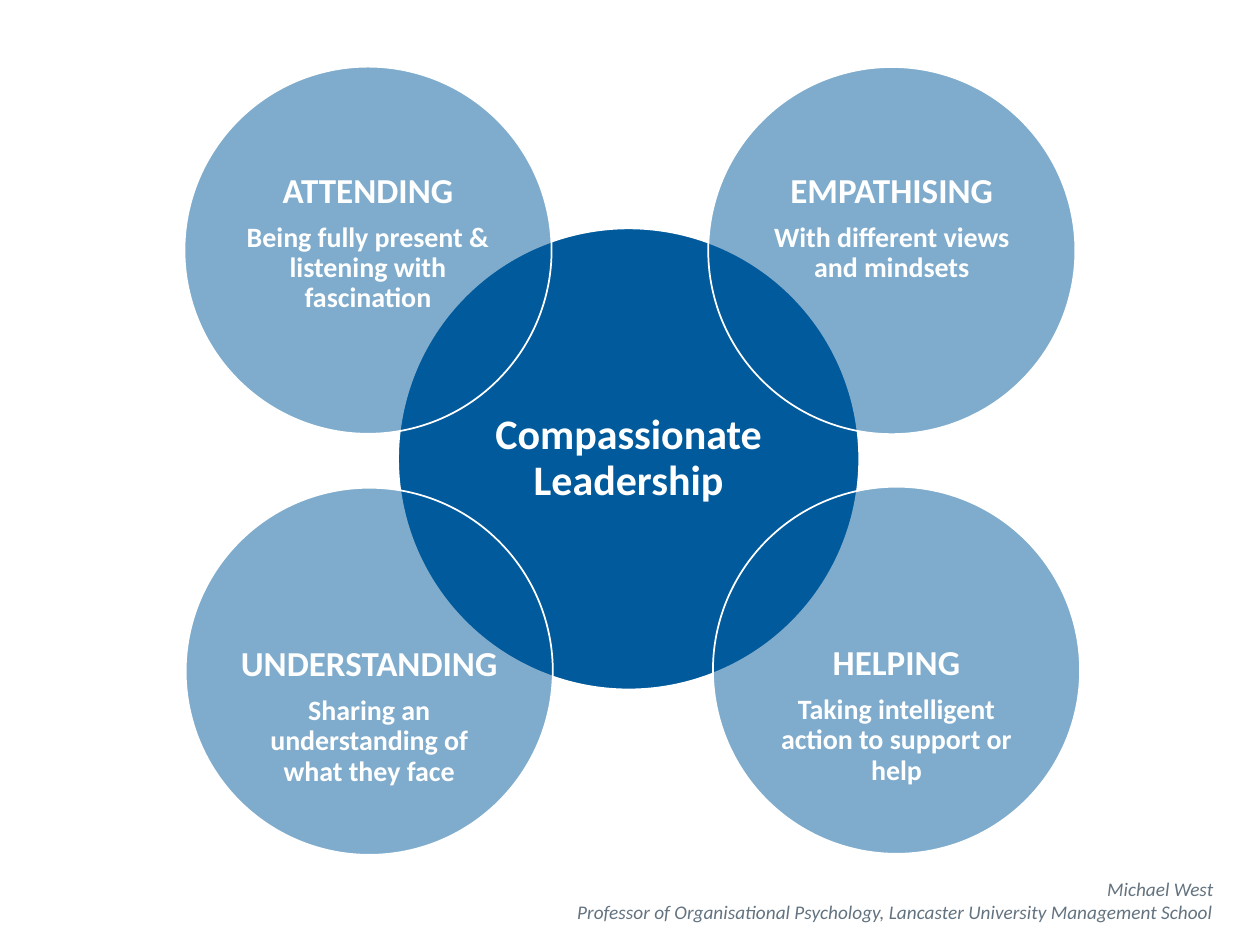
from lxml.etree import SubElement
from pptx import Presentation
from pptx.dml.color import RGBColor
from pptx.enum.shapes import MSO_SHAPE
from pptx.enum.text import MSO_ANCHOR, PP_ALIGN
from pptx.oxml.ns import qn
from pptx.util import Pt

BLUE = RGBColor(0x00, 0x5A, 0x9B)
WHITE = RGBColor(0xFF, 0xFF, 0xFF)
GREY = RGBColor(0x63, 0x73, 0x80)

CORE_SIZE = 263.5
PETAL_SIZE = 209.8
HEADING_DROP = 30

PETALS = [
    (105.4, 38.1, 1, "ATTENDING", "Being fully present & listening with fascination"),
    (404.7, 38.3, 1, "EMPATHISING", "With different views and mindsets"),
    (407.4, 278.1, 2, "HELPING", "Taking intelligent action to support or help"),
    (106.1, 278.7, 2, "UNDERSTANDING", "Sharing an understanding of what they face"),
]
CREDIT = [
    "Michael West",
    "Professor of Organisational Psychology, Lancaster University Management School",
]


class LeadershipSlide:
    font_name = "Calibri"

    def __init__(self, presentation):
        self.slide = presentation.slides.add_slide(presentation.slide_layouts[6])

    def set_lines(self, frame, lines, color, align, bold=False, italic=False):
        frame.word_wrap = True
        for index, (text, size) in enumerate(lines):
            paragraph = frame.paragraphs[0] if index == 0 else frame.add_paragraph()
            paragraph.text = text
            paragraph.alignment = align
            font = paragraph.font
            font.name = self.font_name
            font.size = Pt(size)
            font.bold = bold
            font.italic = italic
            font.color.rgb = color

    def circle(self, left, top, size, lines, opacity=100, inset=0, drop=None):
        disc = self.slide.shapes.add_shape(
            MSO_SHAPE.OVAL, Pt(left), Pt(top), Pt(size), Pt(size)
        )
        disc.shadow.inherit = False
        disc.fill.solid()
        disc.fill.fore_color.rgb = BLUE
        if opacity < 100:
            tint = disc.element.spPr.find(qn("a:solidFill"))[0]
            SubElement(tint, qn("a:alpha")).set("val", str(opacity * 1000))
        disc.line.color.rgb = WHITE
        disc.line.width = Pt(1)
        frame = disc.text_frame
        frame.margin_left = frame.margin_right = Pt(inset)
        frame.margin_top = Pt(drop or inset)
        frame.margin_bottom = Pt(inset)
        frame.vertical_anchor = MSO_ANCHOR.TOP if drop else MSO_ANCHOR.MIDDLE
        self.set_lines(frame, lines, WHITE, PP_ALIGN.CENTER, bold=True)
        for paragraph in frame.paragraphs:
            paragraph.line_spacing = 0.9
        for paragraph in frame.paragraphs[:-1]:
            paragraph.space_after = Pt(7)

    def credit(self, left, top, width, height, lines):
        box = self.slide.shapes.add_textbox(Pt(left), Pt(top), Pt(width), Pt(height))
        self.set_lines(box.text_frame, lines, GREY, PP_ALIGN.RIGHT, italic=True)


def main():
    presentation = Presentation()
    presentation.slide_width = Pt(720)
    presentation.slide_height = Pt(540)
    page = LeadershipSlide(presentation)
    page.circle(227.5, 130.5, CORE_SIZE, [("Compassionate Leadership", 24)], inset=2)
    for left, top, rows_down, heading, detail in PETALS:
        page.circle(
            left, top, PETAL_SIZE, [(heading, 20), (detail, 16)],
            opacity=50, drop=HEADING_DROP * rows_down,
        )
    page.credit(160.5, 497.5, 540, 25, [(line, 11) for line in CREDIT])
    presentation.save("out.pptx")


if __name__ == "__main__":
    main()
